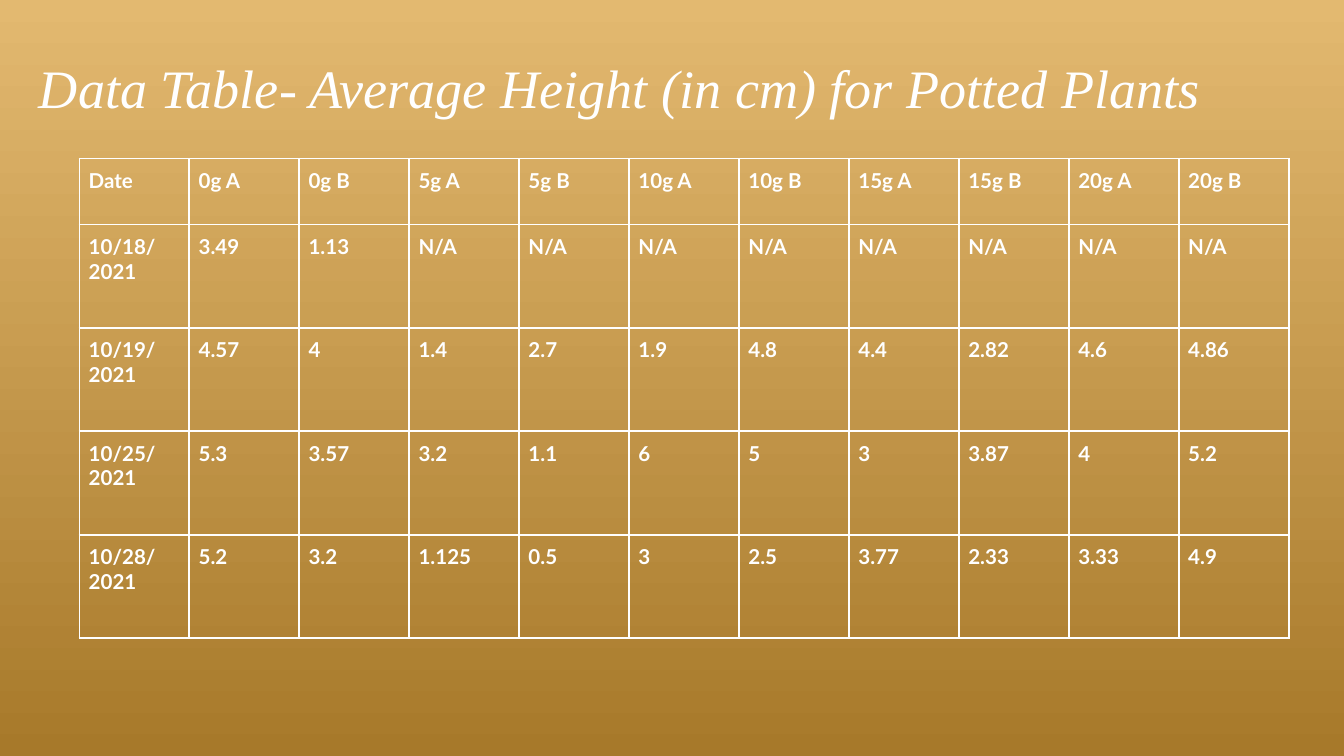
import pptx
import pptx.dml.color
import pptx.enum.text
import pptx.oxml.ns
import pptx.util
from lxml import etree
from pptx.util import Inches

COLORS = {"text": "FFFFFF", "border": "FFFFFF", "top": "E3B970", "bottom": "A7792A"}
ROWS = [
    ["Date", "0g A", "0g B", "5g A", "5g B", "10g A", "10g B", "15g A", "15g B", "20g A", "20g B"],
    ["10/18/\n2021", "3.49", "1.13"] + ["N/A"] * 8,
    ["10/19/\n2021", "4.57", "4", "1.4", "2.7", "1.9", "4.8", "4.4", "2.82", "4.6", "4.86"],
    ["10/25/ 2021", "5.3", "3.57", "3.2", "1.1", "6", "5", "3", "3.87", "4", "5.2"],
    ["10/28/ 2021", "5.2", "3.2", "1.125", "0.5", "3", "2.5", "3.77", "2.33", "3.33", "4.9"],
]
ROW_HEIGHTS = [0.49] + [0.77] * 4
SLIDE_WIDTH = 10
TABLE_WIDTH = 9


def write_text(frame, text, font, size, bold=False, italic=False):
    frame.text = text
    for paragraph in frame.paragraphs:
        paragraph.alignment = pptx.enum.text.PP_ALIGN.LEFT
        for run in paragraph.runs:
            run.font.name = font
            run.font.size = pptx.util.Pt(size)
            run.font.bold = bold
            run.font.italic = italic
            run.font.color.rgb = pptx.dml.color.RGBColor.from_string(COLORS["text"])


def add_borders(cell, color, points):
    properties = cell._tc.get_or_add_tcPr()
    for side in ("lnL", "lnR", "lnT", "lnB"):
        line = etree.SubElement(properties, pptx.oxml.ns.qn(f"a:{side}"), w=str(pptx.util.Pt(points)))
        fill = etree.SubElement(line, pptx.oxml.ns.qn("a:solidFill"))
        etree.SubElement(fill, pptx.oxml.ns.qn("a:srgbClr"), val=color)


presentation = pptx.Presentation()
presentation.slide_width = Inches(SLIDE_WIDTH)
presentation.slide_height = Inches(SLIDE_WIDTH * 9 / 16)
slide = presentation.slides.add_slide(presentation.slide_layouts[5])

background = slide.background.fill
background.gradient()
background.gradient_angle = 270
for stop, name in zip(background.gradient_stops, ("top", "bottom")):
    stop.color.rgb = pptx.dml.color.RGBColor.from_string(COLORS[name])

title = slide.shapes.title
title.left, title.top = Inches(0.19), Inches(0.05)
title.width, title.height = Inches(9), Inches(0.94)
title_frame = title.text_frame
title_frame.word_wrap = True
title_frame.auto_size = pptx.enum.text.MSO_AUTO_SIZE.NONE
title_frame.vertical_anchor = pptx.enum.text.MSO_ANCHOR.BOTTOM
title_frame.margin_left = title_frame.margin_right = Inches(0.1)
title_frame.margin_top = title_frame.margin_bottom = Inches(0.1)
write_text(title_frame, "Data Table- Average Height (in cm) for Potted Plants",
           font="Times New Roman", size=29, italic=True)

table = slide.shapes.add_table(
    len(ROWS), len(ROWS[0]), Inches(0.59), Inches(1.18),
    Inches(TABLE_WIDTH), Inches(sum(ROW_HEIGHTS))).table
table.first_row = False
table.horz_banding = False
for column in table.columns:
    column.width = Inches(TABLE_WIDTH / len(ROWS[0]))

for row_index, (values, height) in enumerate(zip(ROWS, ROW_HEIGHTS)):
    table.rows[row_index].height = Inches(height)
    for column_index, value in enumerate(values):
        cell = table.cell(row_index, column_index)
        cell.margin_left = cell.margin_right = Inches(0.07)
        cell.margin_top = cell.margin_bottom = Inches(0.07)
        add_borders(cell, COLORS["border"], 1)
        cell.fill.background()
        write_text(cell.text_frame, value, font="Lato", size=11, bold=True)

presentation.save("out.pptx")
